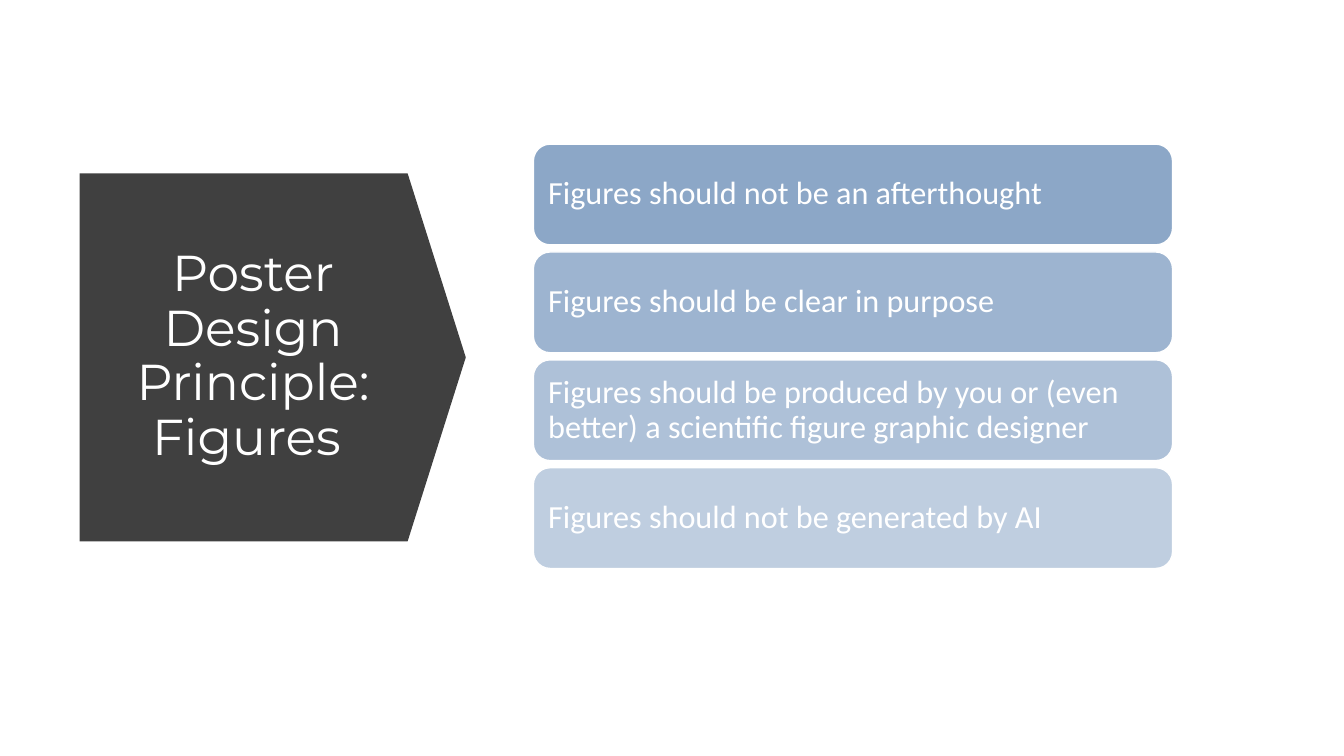
from lxml import etree
from pptx import Presentation
from pptx import util as u
from pptx.dml.color import RGBColor
from pptx.enum import shapes, text
from pptx.oxml.ns import qn

WHITE, BLUE, GREY = "FFFFFF", "809EC2", "404040"
POINTS = {
    "Figures should not be an afterthought": 90,
    "Figures should be clear in purpose": 77,
    "Figures should be produced by you or (even better) "
    "a scientific figure graphic designer": 63,
    "Figures should not be generated by AI": 50,
}


def paint(fill, color):
    fill.solid()
    fill.fore_color.rgb = RGBColor.from_string(color)


def write(shape, words, size, font, align):
    frame = shape.text_frame
    frame.text = words
    form = {"word_wrap": True, "auto_size": text.MSO_AUTO_SIZE.NONE,
            "vertical_anchor": text.MSO_ANCHOR.MIDDLE}
    for side in ("left", "right", "top", "bottom"):
        form["margin_" + side] = u.Inches(0.1)
    for key, value in form.items():
        setattr(frame, key, value)
    para = frame.paragraphs[0]
    para.alignment, para.line_spacing = align, 0.9
    para.font.size, para.font.name = u.Pt(size), font
    paint(para.font.fill, WHITE)


deck = Presentation()
deck.slide_width, deck.slide_height = u.Inches(13.33), u.Inches(7.5)
slide = deck.slides.add_slide(deck.slide_layouts[5])

# Title on an arrow that points right
title = slide.shapes.title
place = {"left": 0.86, "top": 2.15, "width": 3.3, "height": 2.79}
for key, value in place.items():
    setattr(title, key, u.Inches(value))
write(title, "Poster Design Principle: Figures ", 36, "Montserrat",
      text.PP_ALIGN.CENTER)

arrow = slide.shapes.add_shape(
    shapes.MSO_SHAPE.DOWN_ARROW,
    *map(u.Inches, (0.88, 1.63, 3.65, 3.83)))
arrow.rotation = 270
arrow.adjustments[0], arrow.adjustments[1] = 1, 0.158
arrow.shadow.inherit = False
paint(arrow.fill, GREY)
arrow.line.fill.background()
title.element.addprevious(arrow.element)

# Stack of fading boxes
LEFT, TOP, WIDTH, HEIGHT, STEP = 5.29, 1.43, 6.34, 1, 1.07
stack = slide.shapes.add_group_shape()
for row, (words, alpha) in enumerate(POINTS.items()):
    box = stack.shapes.add_shape(
        shapes.MSO_SHAPE.ROUNDED_RECTANGLE,
        *map(u.Inches, (LEFT, TOP + row * STEP, WIDTH, HEIGHT)))
    box.shadow.inherit = False
    paint(box.fill, BLUE)
    tint = box.element.spPr.find(qn("a:solidFill"))[0]
    etree.SubElement(tint, qn("a:alpha"), val=str(alpha * 1000))
    paint(box.line.fill, WHITE)
    box.line.width = u.Pt(1)
    write(box, words, 23, "Calibri", text.PP_ALIGN.LEFT)

deck.save("out.pptx")
